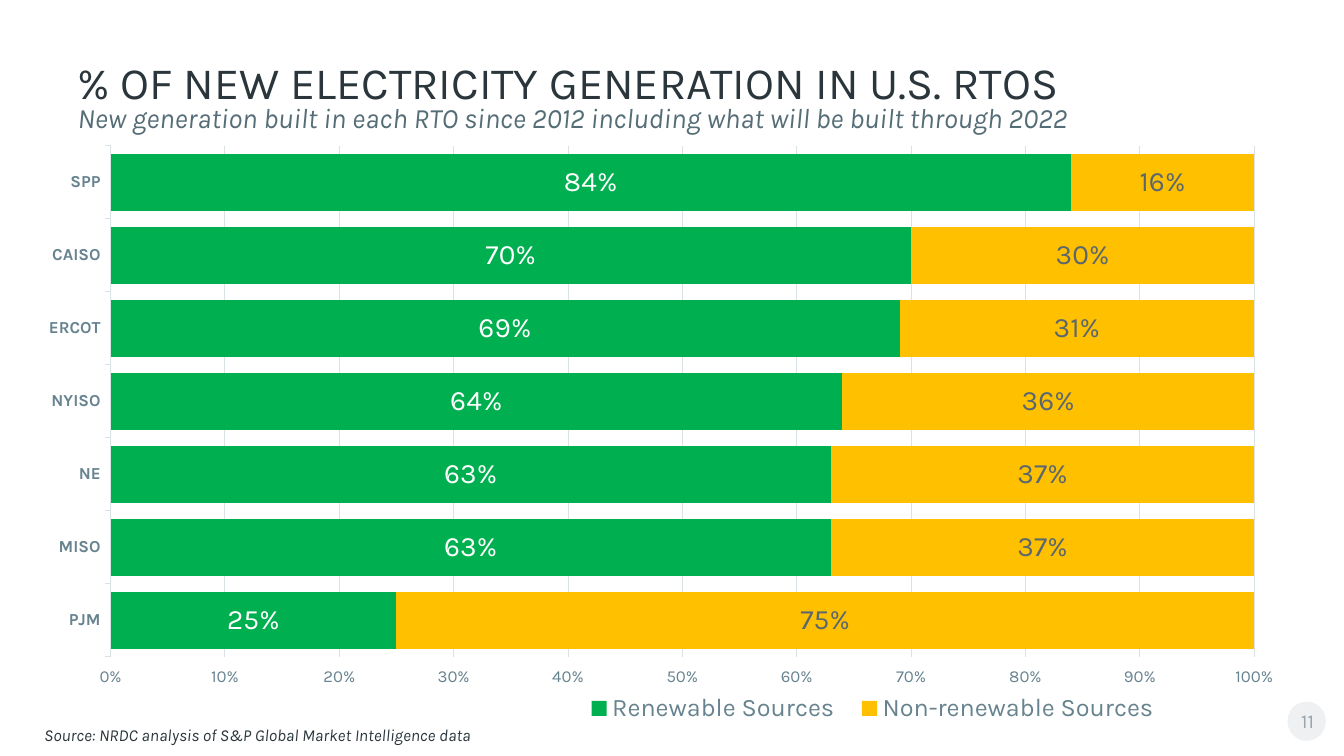
import pptx
import pptx.chart.data
import pptx.dml.color
import pptx.enum.chart
import pptx.enum.shapes
import pptx.enum.text
import pptx.oxml
import pptx.util

FONT = "Karla"
INK = "2A363B"
AXIS = "66838F"
GRID = "DBE2E5"
WIDTH = pptx.util.Inches(13.33)
HEIGHT = pptx.util.Inches(7.5)
ALIGN = pptx.enum.text.PP_ALIGN
ANCHOR = pptx.enum.text.MSO_ANCHOR
TICK = pptx.enum.chart.XL_TICK_MARK

RENEWABLE_SHARES = {
    "PJM": 0.25, "MISO": 0.63, "NE": 0.63, "NYISO": 0.64,
    "ERCOT": 0.69, "CAISO": 0.7, "SPP": 0.84,
}


def area(left, top, width, height):
    return (round(WIDTH * left / 100), round(HEIGHT * top / 100),
            round(WIDTH * width / 100), round(HEIGHT * height / 100))


def paint(color_format, color):
    color_format.rgb = pptx.dml.color.RGBColor.from_string(color)


def style(font, size, color, bold=False, italic=False):
    font.name = FONT
    font.size = pptx.util.Pt(size)
    font.bold = bold
    font.italic = italic
    paint(font.color, color)


def write(paragraph, text, size, color=INK, italic=False, align=ALIGN.LEFT):
    paragraph.alignment = align
    run = paragraph.add_run()
    run.text = text
    style(run.font, size, color, italic=italic)


def text_area(slide, place, anchor=ANCHOR.TOP, side_inset=0.1):
    frame = slide.shapes.add_textbox(*area(*place)).text_frame
    frame.word_wrap = True
    frame.vertical_anchor = anchor
    frame.margin_left = frame.margin_right = pptx.util.Inches(side_inset)
    return frame.paragraphs[0]


def add_heading(slide, headline, subtitle):
    title = slide.shapes.title
    title.left, title.top, title.width, title.height = area(5.03, 8.27, 89.8, 13.73)
    frame = title.text_frame
    frame.word_wrap = True
    frame.auto_size = pptx.enum.text.MSO_AUTO_SIZE.NONE
    frame.vertical_anchor = ANCHOR.TOP
    paragraph = frame.paragraphs[0]
    paragraph.line_spacing = 0.75
    write(paragraph, headline, 32)
    paragraph.add_line_break()
    write(paragraph, subtitle, 20, "556D77", italic=True)


def add_page_number(slide, number):
    badge = slide.shapes.add_shape(
        pptx.enum.shapes.MSO_SHAPE.OVAL, *area(95.8, 92.8, 2.85, 5.2))
    badge.shadow.inherit = False
    badge.fill.solid()
    paint(badge.fill.fore_color, "EEF0F1")
    badge.line.fill.background()
    paragraph = text_area(slide, (95.8, 92.27, 3, 5.33), ANCHOR.BOTTOM, 0.03)
    write(paragraph, number, 14, "99A4AD", align=ALIGN.CENTER)


def place_part(part, left, top, width, height, inner=False):
    for old in part.findall(pptx.oxml.ns.qn("c:layout")):
        part.remove(old)
    target = '<c:layoutTarget val="inner"/>' if inner else ""
    layout = pptx.oxml.parse_xml(
        f'<c:layout {pptx.oxml.ns.nsdecls("c")}><c:manualLayout>{target}'
        '<c:xMode val="edge"/><c:yMode val="edge"/>'
        f'<c:x val="{left}"/><c:y val="{top}"/><c:w val="{width}"/><c:h val="{height}"/>'
        '</c:manualLayout></c:layout>')
    part.insert(0 if inner else 1, layout)


def format_axes(chart):
    categories, shares = chart.category_axis, chart.value_axis
    for axis, bold in ((categories, True), (shares, False)):
        axis.major_tick_mark = TICK.OUTSIDE
        axis.minor_tick_mark = TICK.NONE
        style(axis.tick_labels.font, 12, AXIS, bold=bold)
    shares.minimum_scale, shares.maximum_scale, shares.major_unit = 0, 1, 0.1
    shares.tick_labels.number_format = "0%"
    shares.tick_labels.number_format_is_linked = False
    shares.format.line.fill.background()
    shares.has_major_gridlines = True
    categories.has_major_gridlines = False
    for line in (categories.format.line, shares.major_gridlines.format.line):
        line.width = pptx.util.Pt(0.75)
        paint(line.color, GRID)


def format_series(series, color, label_color):
    series.format.fill.solid()
    paint(series.format.fill.fore_color, color)
    labels = series.data_labels
    labels.show_value = True
    labels.number_format = "0%"
    labels.number_format_is_linked = False
    labels.position = pptx.enum.chart.XL_LABEL_POSITION.CENTER
    style(labels.font, 20, label_color)


def add_generation_chart(slide):
    data = pptx.chart.data.CategoryChartData(number_format="0%")
    data.categories = list(RENEWABLE_SHARES)
    renewable = list(RENEWABLE_SHARES.values())
    data.add_series("Renewable Sources", renewable)
    data.add_series("Non-renewable Sources", [round(1 - share, 2) for share in renewable])
    chart = slide.shapes.add_chart(
        pptx.enum.chart.XL_CHART_TYPE.BAR_STACKED,
        *area(2.55, 12.27, 93.1, 84.4), data).chart
    style(chart.font, 10, INK)
    chart.has_title = False
    format_axes(chart)
    bars = chart.plots[0]
    bars.gap_width = 28
    bars.overlap = 100
    bars.vary_by_categories = False
    for series, colors in zip(bars.series, (("00B050", "FFFFFF"), ("FFC000", "5A6770"))):
        format_series(series, *colors)
    chart.has_legend = True
    legend = chart.legend
    legend.position = pptx.enum.chart.XL_LEGEND_POSITION.BOTTOM
    legend.include_in_layout = False
    style(legend.font, 18, AXIS)
    chart_space = chart.element
    place_part(chart_space.find(".//" + pptx.oxml.ns.qn("c:plotArea")),
               0.061, 0.083, 0.914, 0.801, inner=True)
    place_part(chart_space.find(".//" + pptx.oxml.ns.qn("c:legend")),
               0.43, 0.93, 0.48, 0.07)


def main():
    deck = pptx.Presentation()
    deck.slide_width, deck.slide_height = WIDTH, HEIGHT
    slide = deck.slides.add_slide(deck.slide_layouts[5])
    add_page_number(slide, "11")
    add_heading(
        slide, "% OF NEW ELECTRICITY GENERATION IN U.S. RTOS",
        "New generation built in each RTO since 2012 including what will be built through 2022")
    add_generation_chart(slide)
    write(text_area(slide, (2.55, 95.2, 53.56, 4)),
          "Source: NRDC analysis of S&P Global Market Intelligence data", 12, italic=True)
    deck.save("out.pptx")


if __name__ == "__main__":
    main()
